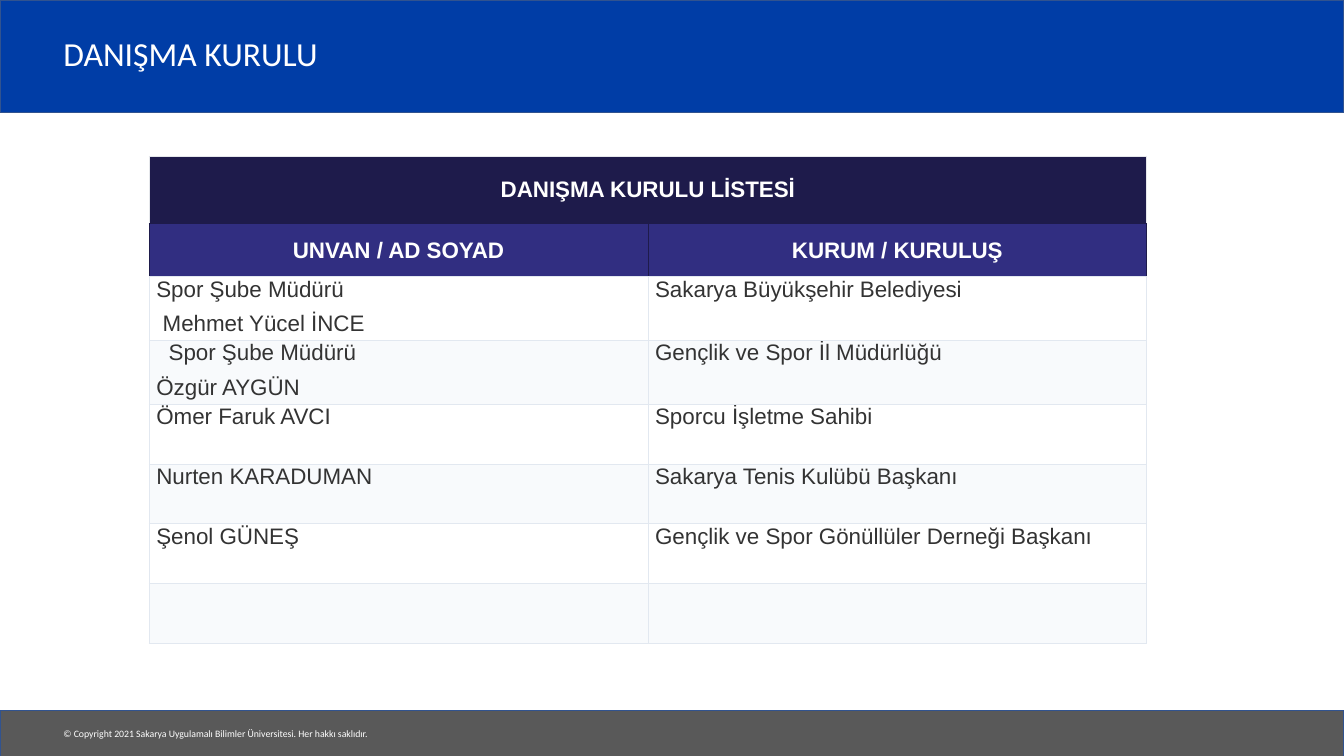
from lxml.etree import SubElement
from pptx import Presentation
from pptx.dml.color import RGBColor
from pptx.enum.shapes import MSO_SHAPE
from pptx.enum.text import MSO_ANCHOR, PP_ALIGN
from pptx.oxml.ns import qn
from pptx.util import Cm, Pt

WHITE, INK, NAVY, INDIGO = "FFFFFF", "333333", "1E1B4B", "312E81"
BAND, GRID, EDGE = "F8FAFC", ("E2E8F0", 0.75), ("E5E7EB", 1)
NAVY_EDGE = (NAVY, 0.75)
SLIDE_WIDTH, SLIDE_HEIGHT = 33.87, 19.05

# Each member: lines of (text, indent in cm), then the institution
MEMBERS = [
    ([("Spor Şube Müdürü", 0), ("Mehmet Yücel İNCE", 0.16)], "Sakarya Büyükşehir Belediyesi"),
    ([("Spor Şube Müdürü", 0.31), ("Özgür AYGÜN", 0)], "Gençlik ve Spor İl Müdürlüğü"),
    ([("Ömer Faruk AVCI", 0)], "Sporcu İşletme Sahibi"),
    ([("Nurten KARADUMAN", 0)], "Sakarya Tenis Kulübü Başkanı"),
    ([("Şenol GÜNEŞ", 0)], "Gençlik ve Spor Gönüllüler Derneği Başkanı"),
    ([], ""),
]


def color(value):
    return RGBColor.from_string(value)


class BoardSlide:
    def __init__(self, slide, heading_font="Calibri", table_font="Arial"):
        self.slide = slide
        self.heading_font = heading_font
        self.table_font = table_font

    def band(self, top, height, fill):
        bar = self.slide.shapes.add_shape(
            MSO_SHAPE.RECTANGLE, 0, Cm(top), Cm(SLIDE_WIDTH), Cm(height))
        bar.shadow.inherit = False
        bar.fill.solid()
        bar.fill.fore_color.rgb = color(fill)
        bar.line.color.rgb = color("31538F")
        bar.line.width = Pt(1)

    def run(self, paragraph, text, font, size, ink, bold=False):
        run = paragraph.add_run()
        run.text = text
        run.font.name, run.font.size, run.font.bold = font, Pt(size), bold
        run.font.color.rgb = color(ink)

    def label(self, left, top, width, height, text, size, spacing=1.0):
        frame = self.slide.shapes.add_textbox(
            Cm(left), Cm(top), Cm(width), Cm(height)).text_frame
        frame.word_wrap = True
        frame.vertical_anchor = MSO_ANCHOR.MIDDLE
        frame.paragraphs[0].line_spacing = spacing
        self.run(frame.paragraphs[0], text, self.heading_font, size, WHITE)

    def table(self, left, top, widths, heights):
        table = self.slide.shapes.add_table(
            len(heights), len(widths), Cm(left), Cm(top),
            Cm(sum(widths)), Cm(sum(heights))).table
        table.first_row = table.horz_banding = False
        for column, width in zip(table.columns, widths):
            column.width = Cm(width)
        for row, height in zip(table.rows, heights):
            row.height = Cm(height)
        return table

    def paint(self, cell, fill, left=GRID, right=GRID, top=GRID, bottom=GRID):
        properties = cell._tc.get_or_add_tcPr()
        edges = {"a:lnL": left, "a:lnR": right, "a:lnT": top, "a:lnB": bottom}
        for tag, (ink, width) in edges.items():
            line = SubElement(properties, qn(tag), w=str(Pt(width)))
            SubElement(SubElement(line, qn("a:solidFill")), qn("a:srgbClr"), val=ink)
        cell.fill.solid()
        cell.fill.fore_color.rgb = color(fill)

    def header_cell(self, cell, text, margin):
        cell.vertical_anchor = MSO_ANCHOR.MIDDLE
        cell.margin_left = cell.margin_right = Cm(margin)
        cell.margin_top = cell.margin_bottom = Cm(margin)
        paragraph = cell.text_frame.paragraphs[0]
        paragraph.alignment = PP_ALIGN.CENTER
        self.run(paragraph, text, self.table_font, 16, WHITE, bold=True)

    def body_cell(self, cell, lines):
        cell.margin_left = cell.margin_right = Cm(0.18)
        cell.margin_top = cell.margin_bottom = 0
        frame = cell.text_frame
        for index, (text, indent) in enumerate(lines):
            paragraph = frame.add_paragraph() if index else frame.paragraphs[0]
            paragraph.alignment = PP_ALIGN.JUSTIFY
            paragraph.space_after = Pt(7)
            if indent:
                paragraph._p.get_or_add_pPr().set("marL", str(Cm(indent)))
            self.run(paragraph, text, self.table_font, 16, INK)


def main():
    deck = Presentation()
    deck.slide_width, deck.slide_height = Cm(SLIDE_WIDTH), Cm(SLIDE_HEIGHT)
    board = BoardSlide(deck.slides.add_slide(deck.slide_layouts[6]))

    # Title band and footer
    board.band(0, 2.84, "003DA6")
    board.band(17.9, 1.16, "595959")
    board.label(1.35, 18.21, 8.6, 0.56,
                "© Copyright 2021 Sakarya Uygulamalı Bilimler Üniversitesi. Her hakkı saklıdır.", 7)
    board.label(1.35, 0.48, 28.02, 1.85, "DANIŞMA KURULU", 24, spacing=0.9)

    # Table heading, merged over both columns
    members = board.table(3.76, 3.94, [12.57] * 2, [1.7, 1.32] + [1.51] * len(MEMBERS))
    members.cell(0, 0).merge(members.cell(0, 1))
    for cell in members.rows[0].cells:
        board.paint(cell, NAVY, EDGE, EDGE, EDGE, NAVY_EDGE)
    board.header_cell(members.cell(0, 0), "DANIŞMA KURULU LİSTESİ", 0.5)

    # Column headings
    for cell, heading in zip(members.rows[1].cells, ["UNVAN / AD SOYAD", "KURUM / KURULUŞ"]):
        board.paint(cell, INDIGO, NAVY_EDGE, NAVY_EDGE, NAVY_EDGE)
        board.header_cell(cell, heading, 0.33)

    # Board members on alternating bands
    for index, (person, institution) in enumerate(MEMBERS):
        institution_lines = [(institution, 0)] if institution else []
        for cell, lines in zip(members.rows[index + 2].cells, [person, institution_lines]):
            board.paint(cell, BAND if index % 2 else WHITE)
            board.body_cell(cell, lines)

    deck.save("out.pptx")


if __name__ == "__main__":
    main()
